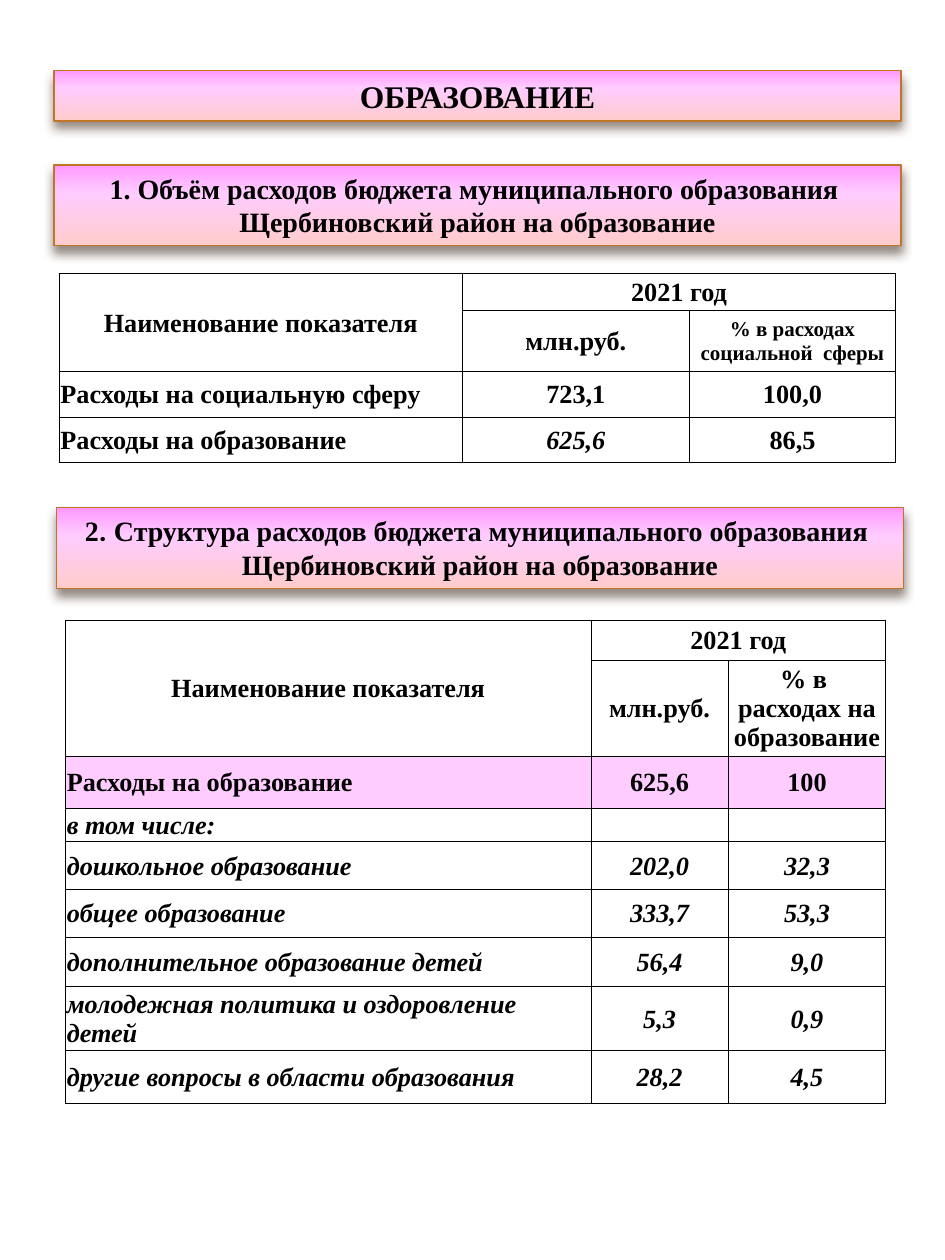
from lxml.etree import SubElement
from pptx import Presentation
from pptx.dml.color import RGBColor
from pptx.enum.shapes import MSO_SHAPE
from pptx.enum.text import MSO_ANCHOR, MSO_AUTO_SIZE, PP_ALIGN
from pptx.oxml import parse_xml
from pptx.oxml.ns import nsdecls, qn
from pptx.util import Inches, Pt

FONT = "Times New Roman"
BANNER_STOPS = ((0, "FF99FF"), (35, "FFCCFF"), (100, "FFCCCC"))
NAME = "Наименование показателя"
YEAR = "2021 год"
UNIT = "млн.руб."

SPENDING = [
    (NAME, YEAR, ""),
    ("", UNIT, "% в расходах социальной  сферы"),
    ("Расходы на социальную сферу", "723,1", "100,0"),
    ("Расходы на образование", "625,6", "86,5"),
]
STRUCTURE = [
    (NAME, YEAR, ""),
    ("", UNIT, "% в \vрасходах на образование"),
    ("Расходы на образование", "625,6", "100"),
    ("в том числе:", "", ""),
    ("дошкольное образование", "202,0", "32,3"),
    ("общее образование", "333,7", "53,3"),
    ("дополнительное образование детей", "56,4", "9,0"),
    ("молодежная политика и оздоровление детей", "5,3", "0,9"),
    ("другие вопросы в области образования", "28,2", "4,5"),
]


def rgb(value):
    """Return the colour for a hex string."""
    return RGBColor.from_string(value)


def style_paragraph(p, size, align=PP_ALIGN.CENTER, italic=False):
    """Give a paragraph its alignment and bold black font."""
    p.alignment = align
    p.font.name = FONT
    p.font.size = Pt(size)
    p.font.bold = True
    p.font.italic = italic
    p.font.color.rgb = rgb("000000")


def add_shadow(sp):
    """Drop a soft brown shadow below a shape."""
    sp.shadow.inherit = False
    effects = sp._element.spPr.find(qn("a:effectLst"))
    outer = SubElement(effects, qn("a:outerShdw"), blurRad=str(Pt(6)),
                       dist=str(Pt(4)), dir="5400000", rotWithShape="0")
    color = SubElement(outer, qn("a:srgbClr"), val="4E3B30")
    SubElement(color, qn("a:alpha"), val="60000")


def fill_gradient(sp, stops):
    """Fill a shape with a gradient running from top to bottom."""
    sp.fill.gradient()
    grad = sp._element.spPr.find(qn("a:gradFill"))
    for child in list(grad):
        grad.remove(child)
    stop_list = SubElement(grad, qn("a:gsLst"))
    for position, value in stops:
        stop = SubElement(stop_list, qn("a:gs"), pos=str(position * 1000))
        SubElement(stop, qn("a:srgbClr"), val=value)
    SubElement(grad, qn("a:lin"), ang="5400000", scaled="0")


def add_banner(slide, left, top, height, lines, size):
    """Add a heading banner whose lines are lists of (text, font) runs."""
    sp = slide.shapes.add_shape(MSO_SHAPE.RECTANGLE, Inches(left), Inches(top),
                                Inches(6.72), Inches(height))
    fill_gradient(sp, BANNER_STOPS)
    sp.line.color.rgb = rgb("C17529")
    sp.line.width = Pt(0.79)
    add_shadow(sp)
    tf = sp.text_frame
    tf.word_wrap = True
    tf.auto_size = MSO_AUTO_SIZE.SHAPE_TO_FIT_TEXT
    tf.vertical_anchor = MSO_ANCHOR.TOP
    p = tf.paragraphs[0]
    style_paragraph(p, size)
    for i, line in enumerate(lines):
        if i:
            p.add_line_break()
        for text, font in line:
            r = p.add_run()
            r.text = text
            r.font.name = font


def set_borders(cell):
    """Draw a thin black line on all sides of a cell."""
    tc_pr = cell._tc.get_or_add_tcPr()
    for i, side in enumerate("LRTB"):
        tc_pr.insert(i, parse_xml(
            f'<a:ln{side} {nsdecls("a")} w="{Pt(0.5)}"><a:solidFill>'
            f'<a:srgbClr val="000000"/></a:solidFill></a:ln{side}>'))


def add_budget_table(slide, left, top, widths, heights, rows,
                     italics=(), highlight=None, small=()):
    """Add a budget table with a merged two-row header."""
    frame = slide.shapes.add_table(len(rows), len(widths), Inches(left), Inches(top),
                                   Inches(sum(widths)), Inches(sum(heights)))
    table = frame.table
    table.first_row = table.horz_banding = False
    for column, width in zip(table.columns, widths):
        column.width = Inches(width)
    for row, height in zip(table.rows, heights):
        row.height = Inches(height)
    for i, texts in enumerate(rows):
        for j, text in enumerate(texts):
            cell = table.cell(i, j)
            cell.margin_left = cell.margin_right = cell.margin_top = Inches(0.01)
            cell.margin_bottom = 0
            cell.vertical_anchor = MSO_ANCHOR.MIDDLE
            cell.fill.solid()
            cell.fill.fore_color.rgb = rgb("FFCCFF" if i == highlight else "FFFFFF")
            set_borders(cell)
            p = cell.text_frame.paragraphs[0]
            p.text = text
            align = PP_ALIGN.LEFT if i > 1 and j == 0 else PP_ALIGN.CENTER
            style_paragraph(p, 12 if (i, j) in small else 15, align, (i, j) in italics)
    table.cell(0, 0).merge(table.cell(1, 0))
    table.cell(0, 1).merge(table.cell(0, 2))


def main():
    """Build the education budget slide."""
    prs = Presentation()
    prs.slide_width, prs.slide_height = Inches(7.5), Inches(10)
    slide = prs.slides.add_slide(prs.slide_layouts[6])
    district = [("Щербиновский район на образование", FONT)]

    add_banner(slide, 0.43, 0.56, 0.4, [[("ОБРАЗОВАНИЕ", FONT)]], 18)
    add_banner(slide, 0.43, 1.31, 0.64, [
        [("1. Объём расходов бюджета муниципального образования ", FONT)],
        district], 16)
    add_budget_table(slide, 0.47, 2.17, (3.2, 1.8, 1.64), (0.29, 0.49, 0.36, 0.36),
                     SPENDING, italics={(3, 1)}, small={(1, 2)})
    add_banner(slide, 0.45, 4.03, 0.64, [
        [("2", FONT), (". ", "Roboto"),
         ("Структура расходов бюджета муниципального образования ", FONT)],
        district], 16)
    add_budget_table(slide, 0.52, 4.92, (4.17, 1.09, 1.25),
                     (0.32, 0.76, 0.42, 0.26, 0.38, 0.38, 0.39, 0.51, 0.42), STRUCTURE,
                     italics={(i, j) for i in range(3, 9) for j in range(3)}, highlight=2)
    prs.save("out.pptx")


if __name__ == "__main__":
    main()
